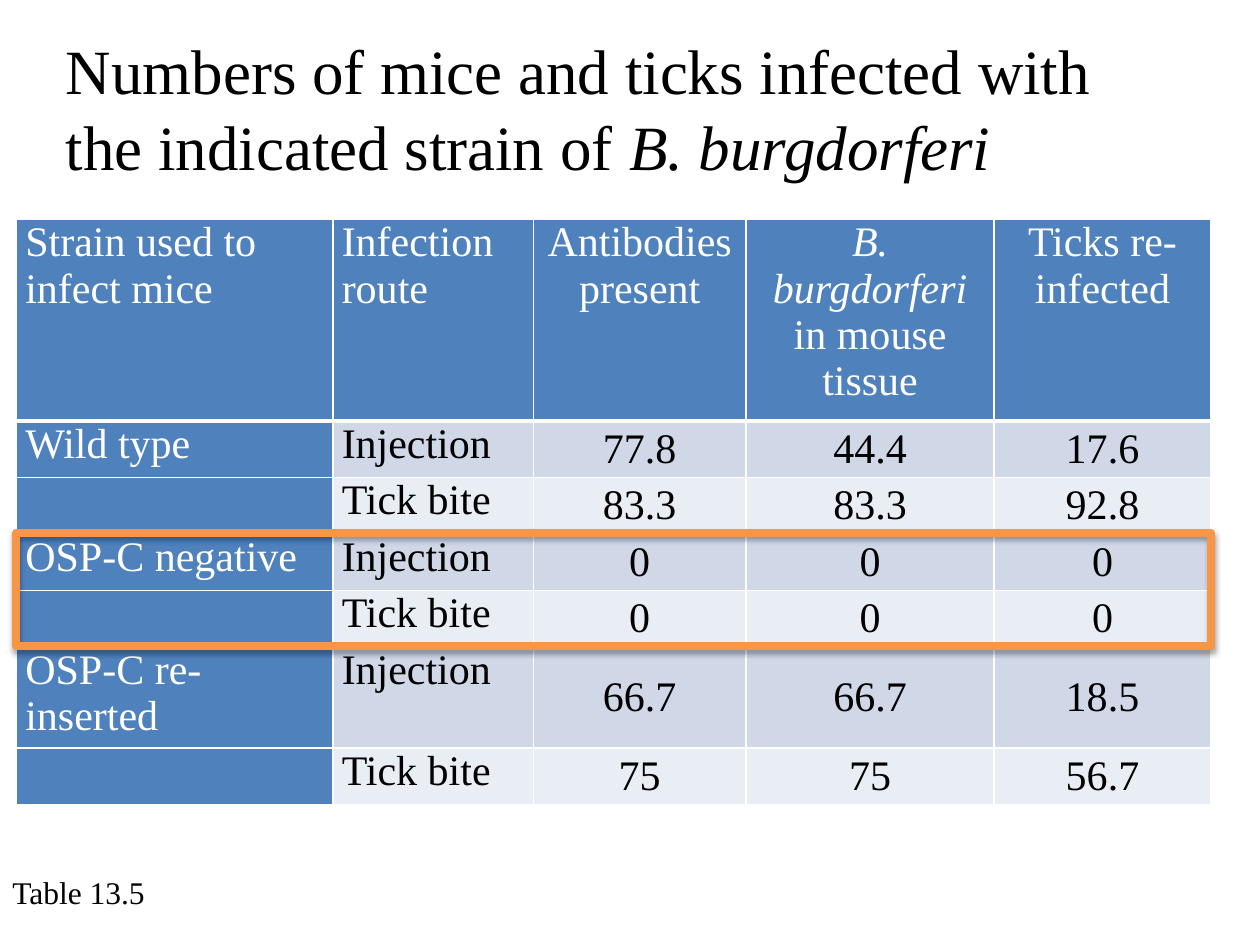
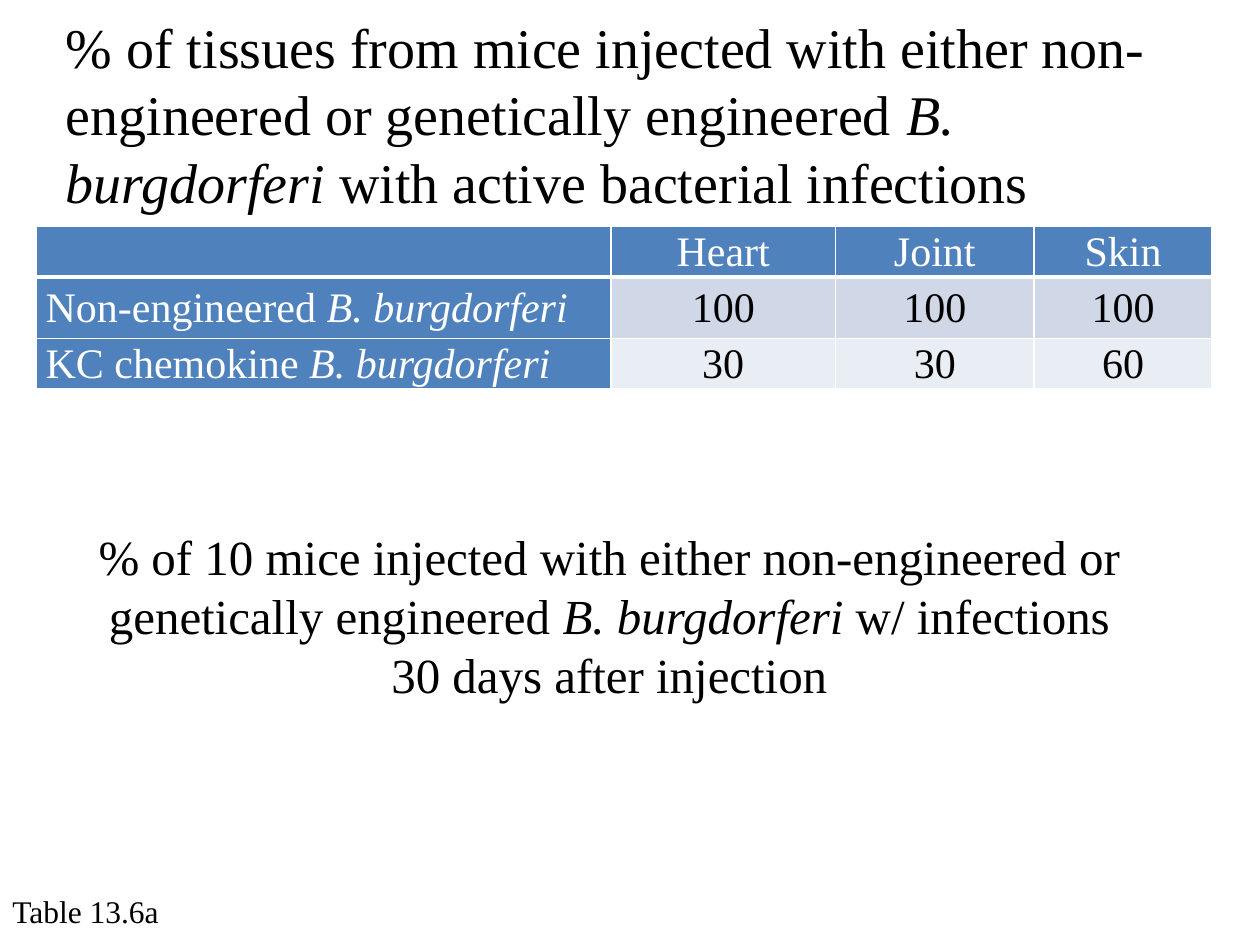
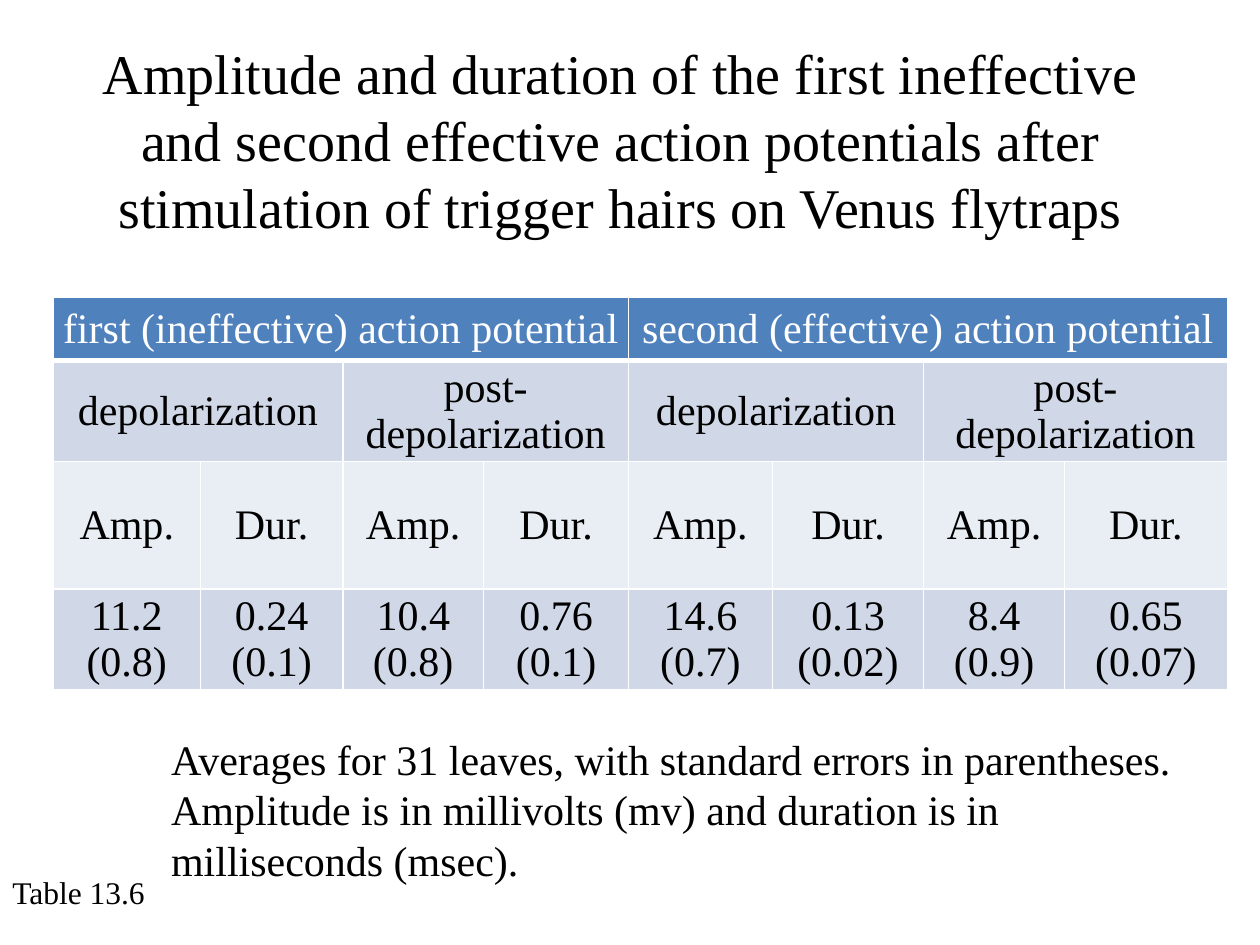
"""Build three slides of tables on infection and action potential results."""
from dataclasses import dataclass

from lxml import etree
from pptx import Presentation
from pptx.dml.color import RGBColor
from pptx.enum.shapes import MSO_SHAPE
from pptx.enum.text import MSO_ANCHOR, MSO_AUTO_SIZE, PP_ALIGN
from pptx.oxml import parse_xml
from pptx.oxml.ns import nsdecls, qn
from pptx.slide import Slide
from pptx.table import _Cell
from pptx.text.text import TextFrame
from pptx.util import Cm, Pt

LEFT, CENTER = PP_ALIGN.LEFT, PP_ALIGN.CENTER
TOP, MIDDLE = MSO_ANCHOR.TOP, MSO_ANCHOR.MIDDLE
NO_AUTO_SIZE = MSO_AUTO_SIZE.NONE
RECTANGLE = MSO_SHAPE.RECTANGLE
TITLE_ONLY = 5


@dataclass(frozen=True)
class Theme:
    """Colours, font and type sizes shared by the slides."""
    font: str = "Times New Roman"
    ink: str = "000000"
    paper: str = "FFFFFF"
    accent: str = "4F81BD"
    band_odd: str = "D0D8E8"
    band_even: str = "E9EDF4"
    highlight: str = "F79646"
    title: int = 36
    long_title: int = 32
    statement: int = 28
    body: int = 24
    caption: int = 18
    rule: int = 1
    header_rule: int = 3
    highlight_line: float = 4.5


THEME = Theme()


@dataclass(frozen=True)
class Box:
    """A position and size in centimetres."""
    left: float
    top: float
    width: float
    height: float

    def lengths(self) -> tuple[Cm, Cm, Cm, Cm]:
        """Return the four values as lengths."""
        return Cm(self.left), Cm(self.top), Cm(self.width), Cm(self.height)


@dataclass(frozen=True)
class TableSpec:
    """The place, grid and contents of a table; None continues a merged cell."""
    left: float
    top: float
    columns: list[float]
    heights: list[float]
    rows: list[list[str | None]]
    label_column: bool = True
    left_columns: int = 1
    top_columns: int = 0
    header_anchor: MSO_ANCHOR = MIDDLE


def write(frame: TextFrame, text: str, *, size: int, color: str = THEME.ink,
          align: PP_ALIGN = LEFT, anchor: MSO_ANCHOR = TOP, wrap: bool = True) -> None:
    """Write one paragraph, setting text between asterisks in italics."""
    frame.word_wrap = wrap
    frame.vertical_anchor = anchor
    paragraph = frame.paragraphs[0]
    paragraph.alignment = align
    for index, part in enumerate(text.split("*")):
        if part:
            run = paragraph.add_run()
            run.text = part
            run.font.name = THEME.font
            run.font.size = Pt(size)
            run.font.italic = index % 2 == 1
            run.font.color.rgb = RGBColor.from_string(color)


def add_title(slide: Slide, text: str, box: Box, *, size: int, align: PP_ALIGN = LEFT) -> None:
    """Move and fill the title placeholder."""
    title = slide.shapes.title
    title.left, title.top, title.width, title.height = box.lengths()
    title.text_frame.auto_size = NO_AUTO_SIZE
    write(title.text_frame, text, size=size, align=align)


def add_text(slide: Slide, text: str, box: Box, *, size: int,
             align: PP_ALIGN = LEFT, wrap: bool = True) -> None:
    """Add a text box."""
    shape = slide.shapes.add_textbox(*box.lengths())
    write(shape.text_frame, text, size=size, align=align, wrap=wrap)


def add_caption(slide: Slide, text: str, top: float, width: float) -> None:
    """Add the table number at the lower left."""
    add_text(slide, text, Box(0, top, width, 1.02), size=THEME.caption, wrap=False)


def set_borders(cell: _Cell, row: int) -> None:
    """Draw white cell borders, heavier below the header row."""
    properties = cell._tc.get_or_add_tcPr()
    heavy_side = {0: "lnB", 1: "lnT"}.get(row)
    for index, side in enumerate(("lnL", "lnR", "lnT", "lnB")):
        weight = THEME.header_rule if side == heavy_side else THEME.rule
        line = etree.Element(qn(f"a:{side}"), w=str(Pt(weight)))
        fill = etree.SubElement(line, qn("a:solidFill"))
        etree.SubElement(fill, qn("a:srgbClr"), val=THEME.paper)
        properties.insert(index, line)


def add_table(slide: Slide, spec: TableSpec) -> None:
    """Add a banded table with merged cells where the contents call for them."""
    box = Box(spec.left, spec.top, sum(spec.columns), sum(spec.heights))
    table = slide.shapes.add_table(len(spec.rows), len(spec.columns), *box.lengths()).table
    for column, width in zip(table.columns, spec.columns):
        column.width = Cm(width)
    for row, height in zip(table.rows, spec.heights):
        row.height = Cm(height)
    for row_index, texts in enumerate(spec.rows):
        for column_index, text in enumerate(texts):
            cell = table.cell(row_index, column_index)
            is_header = row_index == 0
            is_dark = is_header or (spec.label_column and column_index == 0)
            band = THEME.band_odd if row_index % 2 else THEME.band_even
            cell.fill.solid()
            cell.fill.fore_color.rgb = RGBColor.from_string(THEME.accent if is_dark else band)
            set_borders(cell, row_index)
            if text is None:
                continue
            end = column_index + 1
            while end < len(texts) and texts[end] is None:
                end += 1
            if end > column_index + 1:
                cell.merge(table.cell(row_index, end - 1))
            cell.margin_left = cell.margin_right = Cm(0.18)
            cell.margin_top = cell.margin_bottom = 0
            body_anchor = TOP if column_index < spec.top_columns else MIDDLE
            anchor = spec.header_anchor if is_header else body_anchor
            write(cell.text_frame, text, size=THEME.body,
                  color=THEME.paper if is_dark else THEME.ink,
                  align=LEFT if column_index < spec.left_columns else CENTER)
            cell.vertical_anchor = anchor


def add_highlight(slide: Slide, box: Box) -> None:
    """Outline table rows with a softly shadowed frame."""
    frame = slide.shapes.add_shape(RECTANGLE, *box.lengths())
    frame.fill.background()
    frame.line.color.rgb = RGBColor.from_string(THEME.highlight)
    frame.line.width = Pt(THEME.highlight_line)
    frame._element.spPr.append(parse_xml(
        f'<a:effectLst {nsdecls("a")}>'
        f'<a:outerShdw blurRad="{Pt(3.1)}" dist="{Pt(1.8)}" dir="5400000" rotWithShape="0">'
        f'<a:srgbClr val="{THEME.ink}"><a:alpha val="35000"/></a:srgbClr>'
        '</a:outerShdw></a:effectLst>'))


def build_infected_numbers(slide: Slide) -> None:
    """Show infections by strain and route."""
    add_title(slide, "Numbers of mice and ticks infected with the indicated strain of "
              "*B. burgdorferi*", Box(1.07, 0.51, 22.58, 3.33), size=THEME.title)
    add_caption(slide, "Table 13.5", 17.48, 3.2)
    add_table(slide, TableSpec(
        0.33, 4.42, [6.38, 4.04, 4.29, 5, 4.37], [4.05] + [1.14] * 4 + [2.01, 1.14],
        [["Strain used to infect mice", "Infection route", "Antibodies present",
          "*B. burgdorferi* in mouse tissue", "Ticks re-infected"],
         ["Wild type", "Injection", "77.8", "44.4", "17.6"],
         ["", "Tick bite", "83.3", "83.3", "92.8"],
         ["OSP-C negative", "Injection", "0", "0", "0"],
         ["", "Tick bite", "0", "0", "0"],
         ["OSP-C re-inserted", "Injection", "66.7", "66.7", "18.5"],
         ["", "Tick bite", "75", "75", "56.7"]],
        left_columns=2, top_columns=2, header_anchor=TOP))
    add_highlight(slide, Box(0.33, 10.74, 24.08, 2.29))


def build_infected_tissues(slide: Slide) -> None:
    """Show the share of tissues with active infections."""
    add_title(slide, "% of tissues from mice injected with either non-engineered or genetically "
              "engineered *B. burgdorferi* with active bacterial infections",
              Box(1.07, 0.13, 23.34, 4.37), size=THEME.long_title)
    add_caption(slide, "Table 13.6a", 17.86, 3.66)
    add_table(slide, TableSpec(
        0.74, 4.57, [11.58, 4.52, 4.01, 3.58], [0.99, 1.24, 0.99],
        [["", "Heart", "Joint", "Skin"],
         ["Non-engineered *B. burgdorferi*", "100", "100", "100"],
         ["KC chemokine *B. burgdorferi*", "30", "30", "60"]]))
    add_text(slide, "% of 10 mice injected with either non-engineered or genetically engineered "
             "*B. burgdorferi* w/ infections 30 days after injection",
             Box(1.68, 10.49, 21.21, 3.84), size=THEME.statement, align=CENTER)


def build_action_potentials(slide: Slide) -> None:
    """Show amplitude and duration of two action potentials."""
    add_title(slide, "Amplitude and duration of the first ineffective and second effective action "
              "potentials after stimulation of trigger hairs on Venus flytraps",
              Box(1.07, 0.64, 22.89, 4.37), size=THEME.long_title, align=CENTER)
    add_caption(slide, "Table 13.6", 17.48, 3.2)
    add_table(slide, TableSpec(
        1.07, 5.99, [2.97, 2.87, 2.84, 2.92, 2.9, 3.05, 2.84, 3.28], [1.28, 2.01, 2.57, 2.01],
        [["first (ineffective) action potential", None, None, None,
          "second (effective) action potential", None, None, None],
         ["depolarization", None, "post-depolarization", None] * 2,
         ["Amp.", "Dur."] * 4,
         ["11.2 (0.8)", "0.24 (0.1)", "10.4 (0.8)", "0.76 (0.1)",
          "14.6 (0.7)", "0.13 (0.02)", "8.4 (0.9)", "0.65 (0.07)"]],
        label_column=False, left_columns=0))
    add_text(slide, "Averages for 31 leaves, with standard errors in parentheses. Amplitude is in "
             "millivolts (mv) and duration is in milliseconds (msec).",
             Box(3.2, 14.66, 20.93, 3.33), size=THEME.body)


def main() -> None:
    """Build and save the presentation."""
    presentation = Presentation()
    presentation.slide_width, presentation.slide_height = Cm(25.4), Cm(19.05)
    for build in (build_infected_numbers, build_infected_tissues, build_action_potentials):
        build(presentation.slides.add_slide(presentation.slide_layouts[TITLE_ONLY]))
    presentation.save("out.pptx")


if __name__ == "__main__":
    main()
